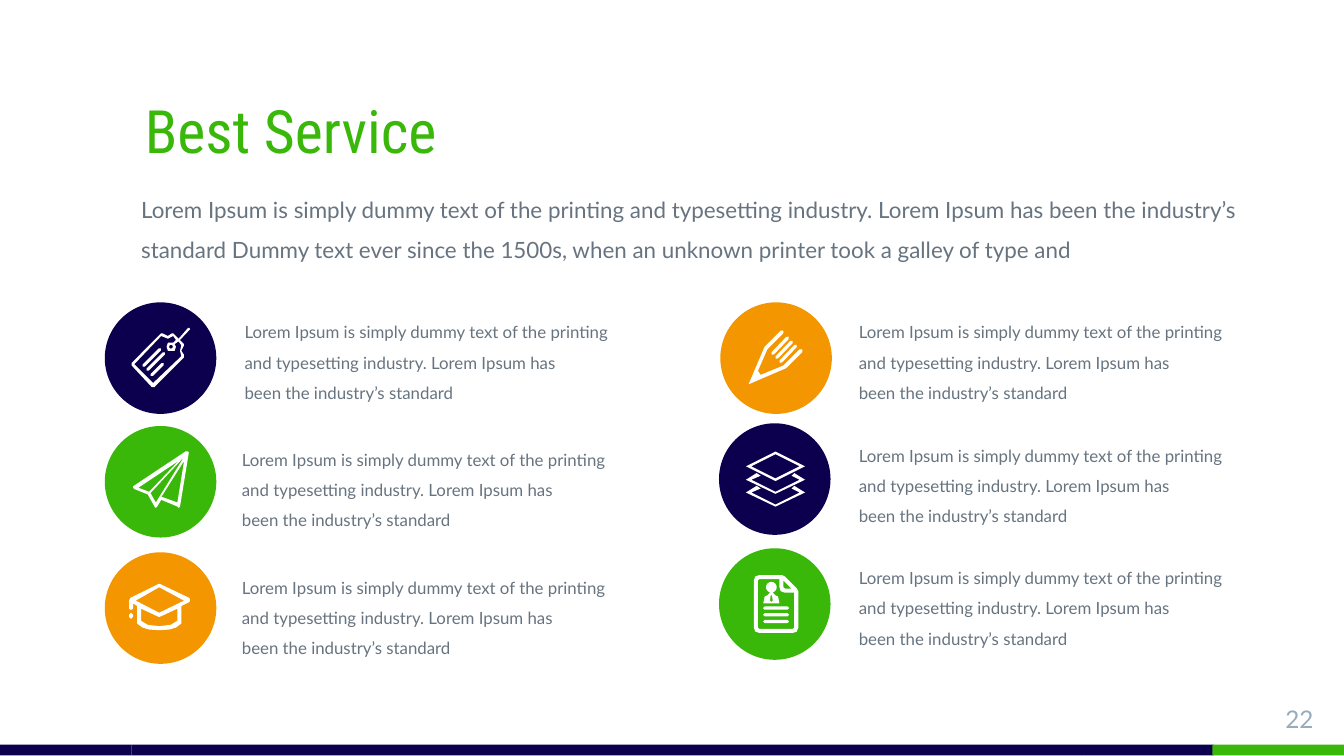
import math

import pptx
import pptx.dml.color
import pptx.enum.shapes
import pptx.enum.text
import pptx.util

Inches = pptx.util.Inches
Kind = pptx.enum.shapes.MSO_SHAPE
Align = pptx.enum.text.PP_ALIGN
Anchor = pptx.enum.text.MSO_ANCHOR
AutoSize = pptx.enum.text.MSO_AUTO_SIZE

NAVY, GREEN, ORANGE, WHITE = "0C004E", "39B80A", "F39600", "FFFFFF"
GREY, PALE = "677480", "97ABBC"
CIRCLE_SIZE = 0.83
INTRO = ("Lorem Ipsum is simply dummy text of the printing and typesetting industry. "
         "Lorem Ipsum has been the industry’s standard Dummy text ever since the 1500s, "
         "when an unknown printer took a galley of type and")
ITEM_TEXT = ["Lorem Ipsum is simply dummy text of the printing and typesetting industry. "
             "Lorem Ipsum has", "been the industry’s standard"]


def color(value):
    return pptx.dml.color.RGBColor.from_string(value)


def apply(target, values):
    for name, value in values.items():
        setattr(target, name, value)


def paint(shape, fill):
    shape.shadow.inherit = False
    shape.fill.solid()
    shape.fill.fore_color.rgb = color(fill)
    shape.line.fill.background()


def add_filled(slide, kind, box, fill):
    shape = slide.shapes.add_shape(kind, *map(Inches, box))
    paint(shape, fill)


def add_text(slide, box, lines, size, fill, font="Lato", insets=(0.1, 0.1),
             frame_format=None, paragraph_format=None):
    frame = slide.shapes.add_textbox(*map(Inches, box)).text_frame
    side, edge = map(Inches, insets)
    apply(frame, {"word_wrap": True, "margin_left": side, "margin_right": side,
                  "margin_top": edge, "margin_bottom": edge, **(frame_format or {})})
    for index, line in enumerate(lines):
        paragraph = frame.add_paragraph() if index else frame.paragraphs[0]
        apply(paragraph, paragraph_format or {})
        run = paragraph.add_run()
        run.text = line
        apply(run.font, {"name": font, "size": pptx.util.Pt(size)})
        run.font.color.rgb = color(fill)


def add_body(slide, box, lines, size):
    add_text(slide, box, lines, size, GREY, insets=(0.07, 0.04),
             frame_format={"auto_size": AutoSize.SHAPE_TO_FIT_TEXT},
             paragraph_format={"line_spacing": 1.5})


def disc(x, y, radius):
    """Outline points of a circle."""
    angles = [math.tau * step / 16 for step in range(16)]
    return [(x + radius * math.cos(a), y + radius * math.sin(a)) for a in angles]


def stroke(x1, y1, x2, y2, width=2.4):
    """Outline points of a straight bar with pointed ends."""
    length = math.hypot(x2 - x1, y2 - y1)
    dx, dy = (x2 - x1) / length * width / 2, (y2 - y1) / length * width / 2
    return [(x1 - dy, y1 + dx), (x1 - dx, y1 - dy), (x1 + dy, y1 - dx),
            (x2 + dy, y2 - dx), (x2 + dx, y2 + dy), (x2 - dy, y2 + dx)]


def add_icon(slide, left, top, contours):
    """Draw white contours given in hundredths of an inch; inner ones are holes."""
    scaled = [[(x * 10, y * 10) for x, y in contour] for contour in contours]
    builder = slide.shapes.build_freeform(*scaled[0][0], scale=Inches(0.001))
    for index, contour in enumerate(scaled):
        if index:
            builder.move_to(*contour[0])
        builder.add_line_segments(contour[1:], close=True)
    paint(builder.convert_to_shape(Inches(left), Inches(top)), WHITE)


def tag():
    outer = [(43, 0), (42, 0), (35, 8), (31, 4), (30, 4), (27, 6), (23, 4), (22, 4),
             (0, 26), (0, 28), (15, 44), (17, 44), (39, 22), (39, 20), (37, 17),
             (39, 13), (39, 12), (36, 9), (43.5, 1)]
    inner = [(37, 13), (36, 17), (37, 21), (16, 41), (2, 27), (22, 6), (27, 8), (31, 6),
             (33, 9), (31, 11), (27, 11), (26, 14), (27, 17), (32, 17), (33, 14),
             (32, 12), (35, 10)]
    return [outer, inner, disc(29.3, 14, 1.4), stroke(9, 28, 21, 16),
            stroke(12, 31, 24, 19), stroke(15, 35, 23, 27)]


def paper_plane():
    outer = [(41, 0), (39, 0), (0, 26), (0, 27), (1, 28), (11, 32), (16, 41), (17, 42),
             (18, 41), (21, 36), (33, 41), (34, 42), (35, 41), (41.5, 1)]
    return [outer, [(4, 27), (34, 7), (12, 30)], [(13, 31), (38, 4), (17, 38)],
            [(33, 38), (22, 34), (21, 34), (38, 7)]]


def graduation_cap():
    outer = [(45, 11), (23, 0.5), (22, 0.5), (1, 11), (0, 13), (0, 19), (1.5, 20),
             (3, 19), (3, 15), (6, 17), (6, 30), (10, 33), (15, 34.5), (22.5, 35),
             (30, 34.5), (35, 33), (39, 30), (39, 17), (45, 14), (45.5, 12.5)]
    bowl = [(36, 28), (31, 31), (22.5, 32), (14, 31), (9, 28), (9, 19), (22, 25),
            (23, 25), (36, 19)]
    top = [(22.5, 22), (5, 13), (22.5, 3), (41, 13)]
    return [outer, bowl, top, stroke(1.5, 23.5, 1.5, 25, 3)]


def pencil():
    outline = [(40, 15), (38, 15), (26, 27), (9, 34), (7, 31), (14, 15), (26, 3),
               (26, 1), (24, 1), (12, 13), (0, 41), (28, 29), (40, 17)]
    return [outline] + [stroke(24 - gap, 24 - gap, 35 - gap, 12.5 - gap)
                        for gap in (0, 3, 6)]


def layers():
    sheet = [(34, 18), (40, 21), (22, 30), (4, 21), (11, 18), (8, 16), (0, 21),
             (22, 31.5), (44, 21), (36, 16)]
    return [[(22, 22), (44, 11), (22, 0), (0, 11)], [(22, 2), (40, 11), (22, 20), (4, 11)],
            sheet, [(x, y + 9.5) for x, y in sheet]]


def profile_page():
    outer = [(4, 0), (21, 0), (23, 1), (32, 10), (33, 12), (33, 39), (32, 42), (29, 43),
             (4, 43), (1, 42), (0, 39), (0, 4), (1, 1)]
    inner = [(30, 39), (29, 40), (4, 40), (3, 39), (3, 4), (4, 3), (19, 3), (19, 9),
             (20, 12), (23, 13), (30, 13)]
    fold = [(22, 4), (28, 10), (23, 10), (22, 9)]
    body = [(7, 21), (8, 16), (10, 15), (12, 13), (14, 13), (16, 15), (18, 16), (19, 21)]
    tie = [(12.5, 15), (12, 19), (13, 20), (14, 19), (13.5, 15)]
    return [outer, inner, fold, disc(13, 9, 4), body, tie] + [
        stroke(8, y, 25, y) for y in (24.5, 29.5, 34.5)]


def add_service(slide, fill, circle, text, icon, contours):
    add_filled(slide, Kind.OVAL, (*circle, CIRCLE_SIZE, CIRCLE_SIZE), fill)
    add_icon(slide, *icon, contours)
    add_body(slide, (*text, 2.99, 0.76), ITEM_TEXT, 9)


def add_footer(slide):
    for left, width, fill in [(0, 0.98, NAVY), (0.98, 7.07, NAVY),
                              (8.05, 0.98, NAVY), (9.02, 0.98, GREEN)]:
        add_filled(slide, Kind.RECTANGLE, (left, 5.54, width, 0.08), fill)
    add_text(slide, (9.27, 5.14, 0.6, 0.34), ["22"], 13, PALE,
             paragraph_format={"alignment": Align.RIGHT})


def main():
    presentation = pptx.Presentation()
    width = Inches(10)
    apply(presentation, {"slide_width": width, "slide_height": width * 9 // 16})
    slide = presentation.slides.add_slide(presentation.slide_layouts[6])
    add_footer(slide)
    add_text(slide, (0.98, 0.39, 7.07, 0.94), ["Best Service"], 32, GREEN,
             font="Roboto Condensed", frame_format={"vertical_anchor": Anchor.BOTTOM})
    add_body(slide, (0.98, 1.32, 8.45, 0.68), [INTRO], 12)
    services = [
        (NAVY, (0.78, 2.25), (1.75, 2.28), (0.98, 2.44), tag()),
        (GREEN, (0.78, 3.17), (1.73, 3.23), (0.99, 3.36), paper_plane()),
        (ORANGE, (0.78, 4.11), (1.73, 4.18), (0.96, 4.34), graduation_cap()),
        (ORANGE, (5.36, 2.25), (6.32, 2.28), (5.57, 2.45), pencil()),
        (NAVY, (5.35, 3.15), (6.32, 3.2), (5.55, 3.36), layers()),
        (GREEN, (5.35, 4.08), (6.32, 4.11), (5.61, 4.28), profile_page()),
    ]
    for service in services:
        add_service(slide, *service)
    presentation.save("out.pptx")


if __name__ == "__main__":
    main()
